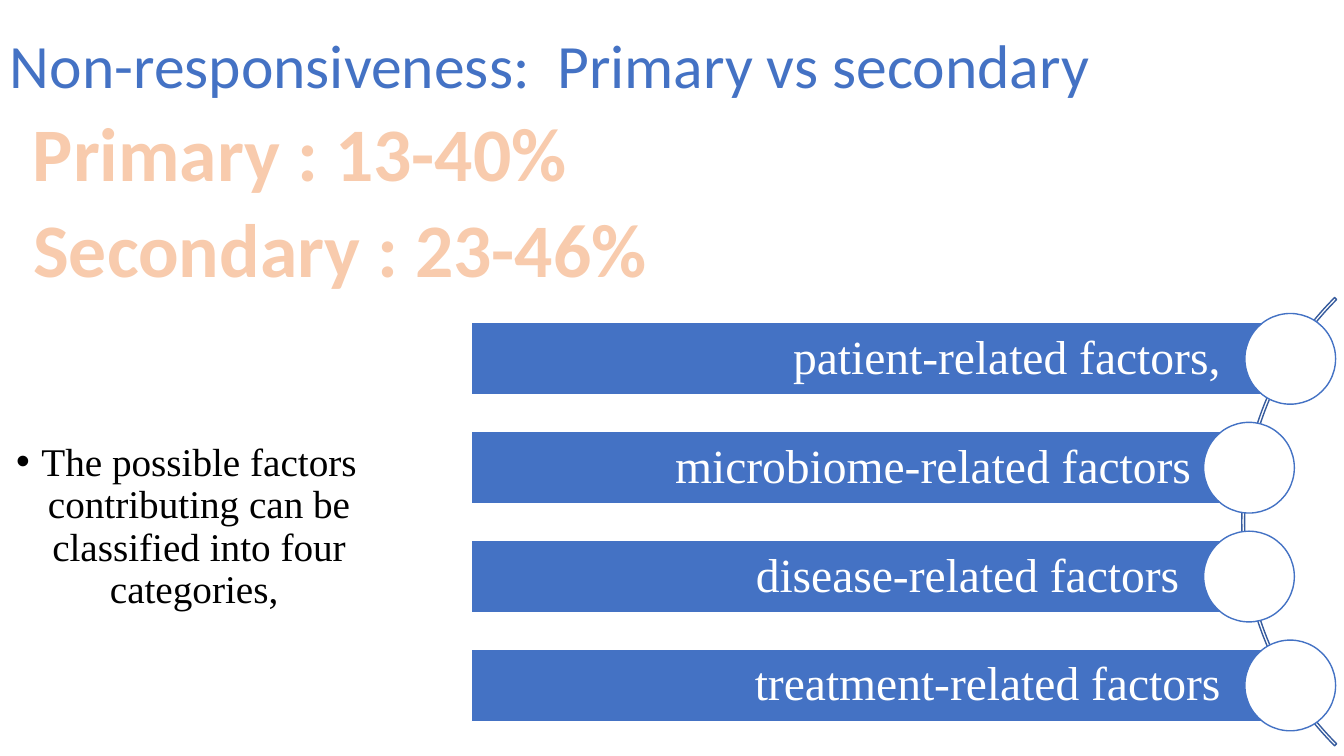
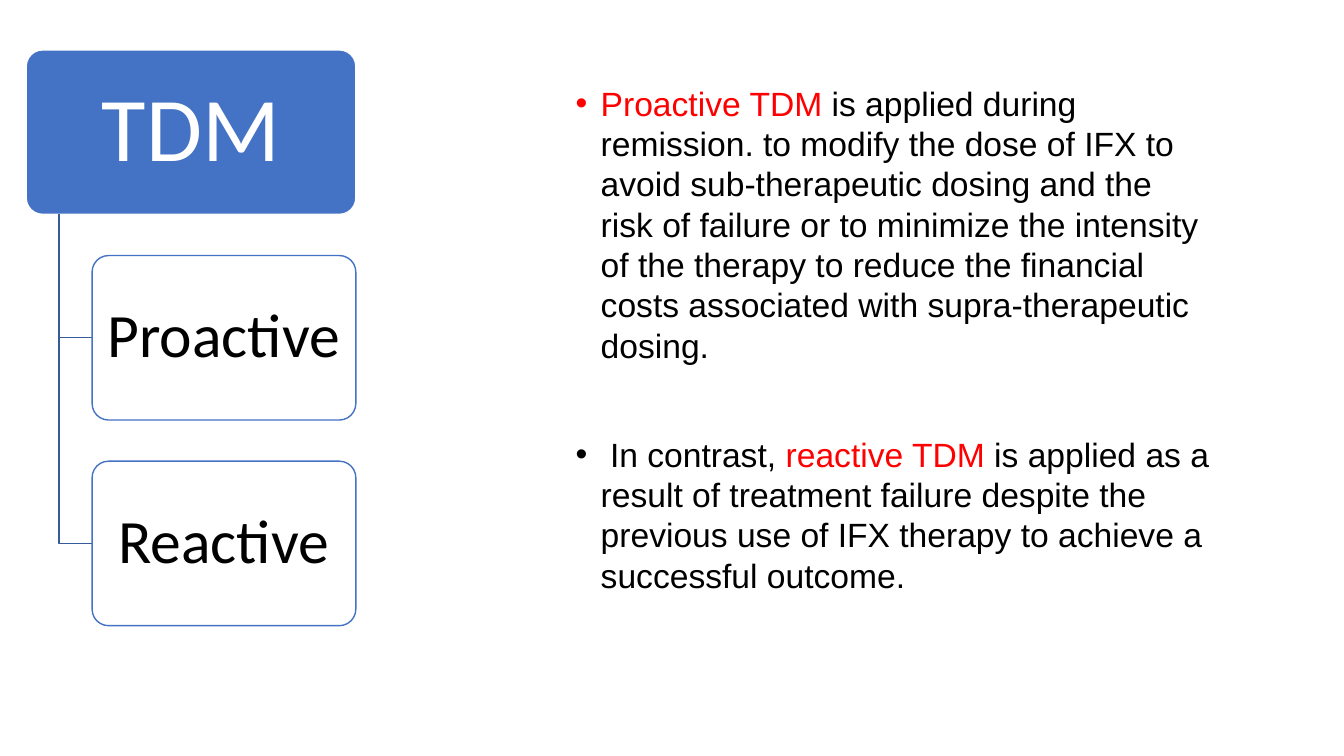
import pptx
import pptx.util
import pptx.dml.color
import pptx.enum.shapes
import pptx.enum.text
import pptx.oxml
import pptx.oxml.ns

WIDTH = pptx.util.Inches(13.33)
HEIGHT = pptx.util.Inches(7.5)
COLORS = {
    "blue": "4472C4",
    "dark_blue": "365B9D",
    "white": "FFFFFF",
    "black": "000000",
    "red": "FF0000",
    "peach": "F8CBAD",
    "orange": "ED7D31",
}
SHAPES = pptx.enum.shapes.MSO_SHAPE
ALIGN = pptx.enum.text.PP_ALIGN
ANCHOR = pptx.enum.text.MSO_ANCHOR
BODY_INSETS = (0.1, 0.05, 0.1, 0.05)


def column(percent):
    return round(WIDTH * percent / 100)


def row(percent):
    return round(HEIGHT * percent / 100)


def place(left, top, width, height):
    return column(left), row(top), column(width), row(height)


def rgb(name):
    return pptx.dml.color.RGBColor.from_string(COLORS[name])


def add_element(parent, tag, **attributes):
    element = pptx.oxml.parse_xml(f'<{tag} {pptx.oxml.ns.nsdecls("a")}/>')
    for name, value in attributes.items():
        element.set(name, value)
    parent.append(element)
    return element


def setup_frame(shape, anchor=ANCHOR.TOP, insets=BODY_INSETS, wrap=True):
    frame = shape.text_frame
    frame.word_wrap = wrap
    frame.vertical_anchor = anchor
    sides = ("margin_left", "margin_top", "margin_right", "margin_bottom")
    for side, inset in zip(sides, insets):
        setattr(frame, side, pptx.util.Inches(inset))
    return frame


def add_run(paragraph, text, size, font, color, bold=False):
    run = paragraph.add_run()
    run.text = text
    run.font.size = pptx.util.Pt(size)
    run.font.name = font
    run.font.bold = bold
    run.font.color.rgb = rgb(color)
    return run


def format_paragraph(paragraph, align=ALIGN.LEFT, spacing=0.9, before=0):
    paragraph.alignment = align
    paragraph.line_spacing = spacing
    paragraph.space_before = pptx.util.Pt(before)


def add_bullet(paragraph):
    properties = paragraph._p.get_or_add_pPr()
    indent = pptx.util.Inches(0.25)
    properties.set("marL", str(indent))
    properties.set("indent", str(-indent))
    add_element(properties, "a:buFont", typeface="Arial")
    add_element(properties, "a:buChar", char="•")


def add_title(slide, text):
    shape = slide.shapes.add_textbox(*place(0, 0, 86.25, 18.27))
    paragraph = setup_frame(shape, ANCHOR.MIDDLE).paragraphs[0]
    format_paragraph(paragraph)
    add_run(paragraph, text, 44, "Calibri", "blue")


def add_bullets(slide, area, items, size, font, align, spacing, gap):
    frame = setup_frame(slide.shapes.add_textbox(*place(*area)))
    for index, runs in enumerate(items):
        paragraph = frame.add_paragraph() if index else frame.paragraphs[0]
        format_paragraph(paragraph, align, spacing, gap if index else 0)
        add_bullet(paragraph)
        for text, color in runs:
            add_run(paragraph, text, size, font, color)


def add_rate(slide, top, width, text):
    shape = slide.shapes.add_textbox(*place(1.5, top, width, 13.47))
    paragraph = setup_frame(shape, wrap=False).paragraphs[0]
    format_paragraph(paragraph, ALIGN.CENTER, 1)
    run = add_run(paragraph, text, 54, "Calibri", "peach", bold=True)
    outline = add_element(run.font._element, "a:ln", w=str(pptx.util.Pt(1.75)))
    fill = add_element(outline, "a:solidFill")
    add_element(fill, "a:srgbClr", val=COLORS["orange"])
    run.font._element.insert(0, outline)


def style_shape(shape, fill, line):
    shape.shadow.inherit = False
    if fill:
        shape.fill.solid()
        shape.fill.fore_color.rgb = rgb(fill)
    else:
        shape.fill.background()
    shape.line.color.rgb = rgb(line)
    shape.line.width = pptx.util.Pt(1)


def add_preset(slide, preset, area, fill, line):
    shape = slide.shapes.add_shape(preset, *place(*area))
    style_shape(shape, fill, line)
    return shape


def add_label(shape, text, size, font, color, align, insets):
    paragraph = setup_frame(shape, ANCHOR.MIDDLE, insets).paragraphs[0]
    format_paragraph(paragraph, align)
    add_run(paragraph, text, size, font, color)


def add_factor_list(slide, factors):
    left, top, height, step = 35.1, 42.67, 9.6, 14.4
    circle_width, circle_height = 6.75, 12
    arc = add_preset(slide, SHAPES.BLOCK_ARC, (92.4, 27.07, 47.18, 83.87), None, "dark_blue")
    for index, value in enumerate((81, 135, 0.0045)):
        arc.adjustments[index] = value
    for index, (text, right) in enumerate(factors):
        bar_top = top + index * step
        bar = add_preset(slide, SHAPES.RECTANGLE, (left, bar_top, right - left, height), "blue", "white")
        add_label(bar, text, 34, "Times New Roman", "white", ALIGN.RIGHT, (0.09, 0.09, 0.57, 0.09))
        circle = (right - circle_width / 2, bar_top + (height - circle_height) / 2, circle_width, circle_height)
        add_preset(slide, SHAPES.OVAL, circle, "white", "blue")


def add_card(slide, area, text, size, fill, line, color):
    card = add_preset(slide, SHAPES.ROUNDED_RECTANGLE, area, fill, line)
    card.adjustments[0] = 0.1
    add_label(card, text, size, "Calibri", color, ALIGN.CENTER, (0.06, 0.06, 0.06, 0.06))
    return card


def add_branch(slide, trunk, top, end, middle):
    builder = slide.shapes.build_freeform(column(trunk), row(top))
    builder.add_line_segments(
        [(column(trunk), row(middle)), (column(end), row(middle))], close=False
    )
    style_shape(builder.convert_to_shape(), None, "dark_blue")


def add_hierarchy(slide, parent, children):
    left, top, width, height = 1.95, 6.6, 24.53, 21.76
    child_left, child_width = left + width * 0.2, width * 0.8
    step = height * 1.25
    add_card(slide, (left, top, width, height), parent, 65, "blue", "white", "white")
    for index, text in enumerate(children, 1):
        child_top = top + index * step
        add_branch(slide, left + width * 0.1, top + height, child_left, child_top + height / 2)
        card = add_card(slide, (child_left, child_top, child_width, height), text, 44, "white", "blue", "black")
        color = card.fill._xPr.find(".//" + pptx.oxml.ns.qn("a:srgbClr"))
        add_element(color, "a:alpha", val="90000")


def build_responsiveness(slide):
    add_title(slide, "Non-responsiveness:  Primary vs secondary")
    text = "The possible factors contributing can be classified into four categories, "
    add_bullets(slide, (0, 57.87, 27.75, 25.33), [[(text, "black")]],
                28, "Times New Roman", ALIGN.CENTER, 0.9, 0)
    add_factor_list(slide, [
        ("patient-related factors, ", 96),
        ("microbiome-related factors", 92.93),
        ("disease-related factors ", 92.93),
        ("treatment-related factors ", 96),
    ])
    add_rate(slide, 13.33, 41.63, "Primary : 13-40%")
    add_rate(slide, 26, 47.63, "Secondary : 23-46%")


def build_monitoring(slide):
    items = [
        [("Proactive TDM ", "red"),
         ("is applied during remission. to modify the dose of IFX to avoid sub-therapeutic "
          "dosing and the risk of failure or to minimize the intensity of the therapy to reduce "
          "the financial costs associated with supra-therapeutic dosing.", "black")],
        [(" In contrast, ", "black"),
         ("reactive TDM ", "red"),
         ("is applied as a result of treatment failure despite the previous use of IFX therapy "
          "to achieve a successful outcome.", "black")],
    ]
    add_bullets(slide, (42.08, 10.27, 48.9, 70), items, 24, "Arial", ALIGN.LEFT, 1, 49)
    add_hierarchy(slide, "TDM", ["Proactive", "Reactive"])


def main():
    presentation = pptx.Presentation()
    presentation.slide_width = WIDTH
    presentation.slide_height = HEIGHT
    for build in (build_responsiveness, build_monitoring):
        build(presentation.slides.add_slide(presentation.slide_layouts[6]))
    presentation.save("out.pptx")


if __name__ == "__main__":
    main()
